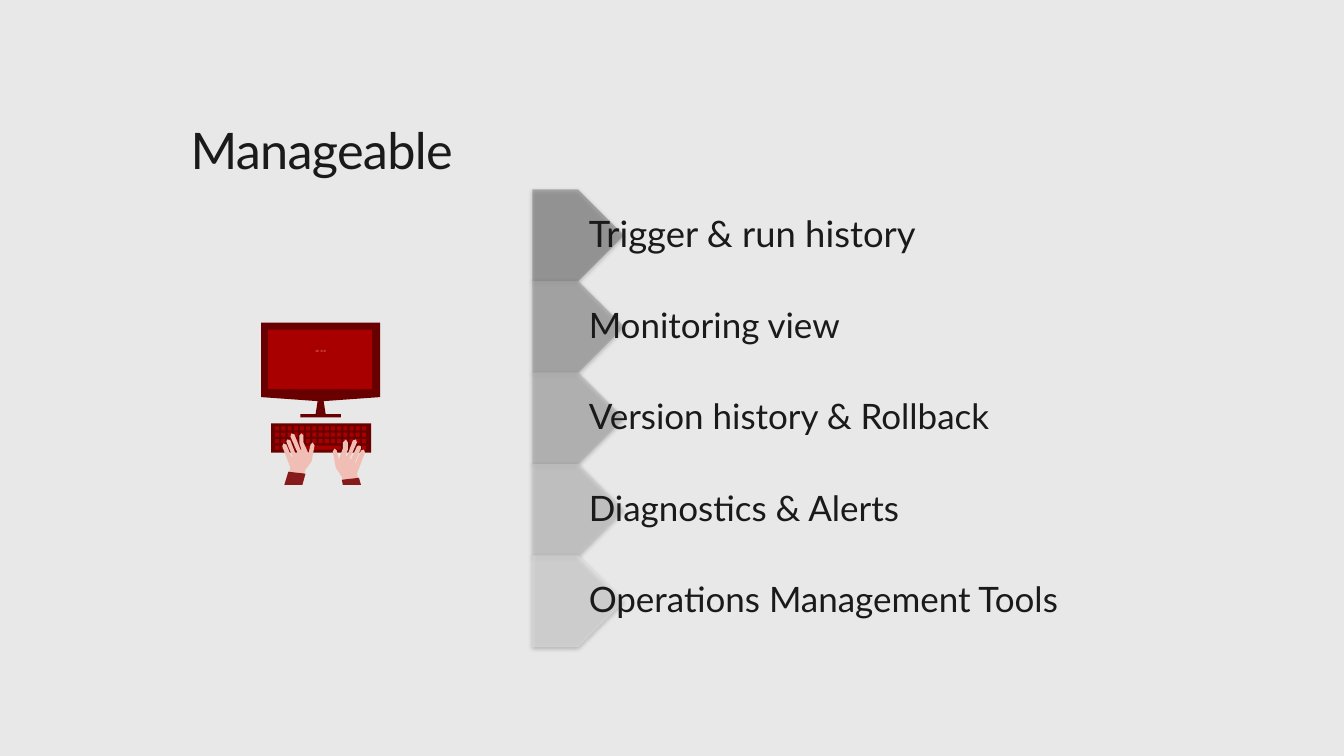
from dataclasses import dataclass
from itertools import product
from lxml.etree import SubElement
from pptx import Presentation
from pptx.dml.color import RGBColor
from pptx.enum.shapes import MSO_SHAPE
from pptx.enum.text import MSO_ANCHOR, PP_ALIGN
from pptx.oxml.ns import qn
from pptx.util import Inches, Pt

COLS, ROWS = 1333, 750


@dataclass(frozen=True)
class Theme:
    face: str = "Lato"
    ink: str = "1A1A1A"
    back: str = "E8E8E8"
    dark: str = "690000"
    red: str = "A80000"
    glow: str = "C43535"
    skin: str = "F0BEB4"
    cuff: str = "871A1A"
    head: int = 36
    big: int = 26
    body: int = 25


def apply(item, values):
    for key, value in values.items():
        setattr(item, key, value)


class Board:
    def __init__(self, deck, theme):
        self.theme = theme
        self.cell = (deck.slide_width / COLS, deck.slide_height / ROWS)
        self.slide = deck.slides.add_slide(deck.slide_layouts[5])
        fill = self.slide.background.fill
        fill.solid()
        fill.fore_color.rgb = RGBColor.from_string(theme.back)
        self.group()

    def group(self):
        self.shapes = self.slide.shapes.add_group_shape().shapes

    def place(self, box):
        wide, high = self.cell
        return [round(n * unit) for n, unit in zip(box, (wide, high, wide, high))]

    def letter(self, frame, text, size, inset=0, **form):
        edge = round(inset * self.cell[1])
        apply(frame, dict(margin_left=0, margin_right=0, margin_top=edge,
                          margin_bottom=edge, word_wrap=True, **form))
        para = frame.paragraphs[0]
        para.alignment = PP_ALIGN.LEFT
        run = para.add_run()
        run.text = text
        apply(run.font, dict(name=self.theme.face, size=Pt(size)))
        run.font.color.rgb = RGBColor.from_string(self.theme.ink)
        return para

    def title(self, box, text):
        shape = self.slide.shapes.title
        apply(shape, dict(zip(("left", "top", "width", "height"), self.place(box))))
        para = self.letter(shape.text_frame, text, self.theme.head,
                           vertical_anchor=MSO_ANCHOR.TOP)
        para.runs[0].font._element.set("spc", "-50")

    def label(self, box, text, size):
        frame = self.shapes.add_textbox(*self.place(box)).text_frame
        para = self.letter(frame, text, size, 3, vertical_anchor=MSO_ANCHOR.MIDDLE)
        para.line_spacing = 0.9

    def paint(self, shape, color):
        shape.fill.solid()
        shape.fill.fore_color.rgb = RGBColor.from_string(color)
        shape.line.fill.background()
        shape.shadow.inherit = False
        return shape

    def block(self, box, color, kind=MSO_SHAPE.RECTANGLE):
        return self.paint(self.shapes.add_shape(kind, *self.place(box)), color)

    def arrow(self, box, color):
        props = self.block(box, color, MSO_SHAPE.PENTAGON)._element.spPr
        tint = props.find(qn("a:solidFill")).find(qn("a:srgbClr"))
        SubElement(tint, qn("a:alpha"), val="50000")
        cast = SubElement(props.find(qn("a:effectLst")), qn("a:outerShdw"),
                          blurRad=str(int(Pt(3.5))), dist=str(int(Pt(1.1))),
                          dir="5400000", algn="ctr", rotWithShape="0")
        shade = SubElement(cast, qn("a:srgbClr"), val="000000")
        SubElement(shade, qn("a:alpha"), val="45000")

    def outline(self, points, color):
        form = self.shapes.build_freeform(*points[0], scale=self.cell)
        form.add_line_segments(points[1:], close=True)
        self.paint(form.convert_to_shape(), color)


ITEMS = ("Trigger & run history", "Monitoring view", "Version history & Rollback",
         "Diagnostics & Alerts", "Operations Management Tools")

SCREEN = [(377, 394), (377, 320), (259, 320), (259, 394), (315, 398), (313, 411),
          (298, 411), (298, 414), (338, 414), (338, 411), (323, 411), (321, 398)]

RIGHT = [(361, 446), (358, 447), (353, 459), (352, 459), (358, 445), (358, 443),
         (356, 442), (354, 443), (348, 456), (347, 455), (354, 439), (353, 436),
         (350, 437), (344, 453), (343, 452), (345, 446), (345, 439), (343, 436),
         (340, 439), (340, 445), (336, 456), (334, 447), (332, 445), (330, 448),
         (333, 464), (339, 473), (340, 476), (355, 474), (354, 470), (362, 449)]

LEFT = [(310, 439), (308, 441), (306, 450), (301, 439), (301, 432), (299, 430),
        (297, 432), (297, 440), (299, 446), (298, 446), (292, 431), (289, 430),
        (288, 433), (295, 449), (293, 450), (288, 437), (285, 436), (284, 438),
        (290, 453), (289, 453), (284, 441), (281, 440), (280, 443), (288, 464),
        (287, 468), (302, 470), (303, 466), (309, 458), (312, 442)]

CUFFS = ([(282, 481), (300, 481), (303, 470), (286, 468)],
         [(339, 476), (340, 481), (358, 481), (356, 474)])


def draw_list(board):
    pitch = 90.75
    for row, text in enumerate(ITEMS):
        top = 188 + row * pitch
        gray = f"{round(115 + 28.75 * row):02X}" * 3
        board.arrow((528, top, 91, 91), gray)
        size = board.theme.body if row else board.theme.big
        board.label((584, top, 483, 91), text, size)


def draw_desk(board):
    theme = board.theme
    board.group()
    board.outline(SCREEN, theme.dark)
    board.block((266, 327, 103, 59), theme.red)
    for left, wide in ((313, 3), (318, 2), (321, 2)):
        board.block((left, 347, wide, 2), theme.glow)
    board.block((269, 420, 99, 29), theme.dark)
    for row, col in product(range(4), range(15)):
        if row < 3 or not 4 <= col <= 10:
            board.block((273 + 6.14 * col, 423 + 6.33 * row, 4, 4), theme.red)
    board.block((297, 442, 41, 4), theme.red)
    for hand in (RIGHT, LEFT):
        board.outline(hand, theme.skin)
    for cuff in CUFFS:
        board.outline(cuff, theme.cuff)


def main():
    deck = Presentation()
    apply(deck, dict(slide_width=Inches(13.33), slide_height=Inches(7.5)))
    board = Board(deck, Theme())
    board.title((189, 118, 312, 61), "Manageable")
    draw_list(board)
    draw_desk(board)
    deck.save("out.pptx")


if __name__ == "__main__":
    main()
